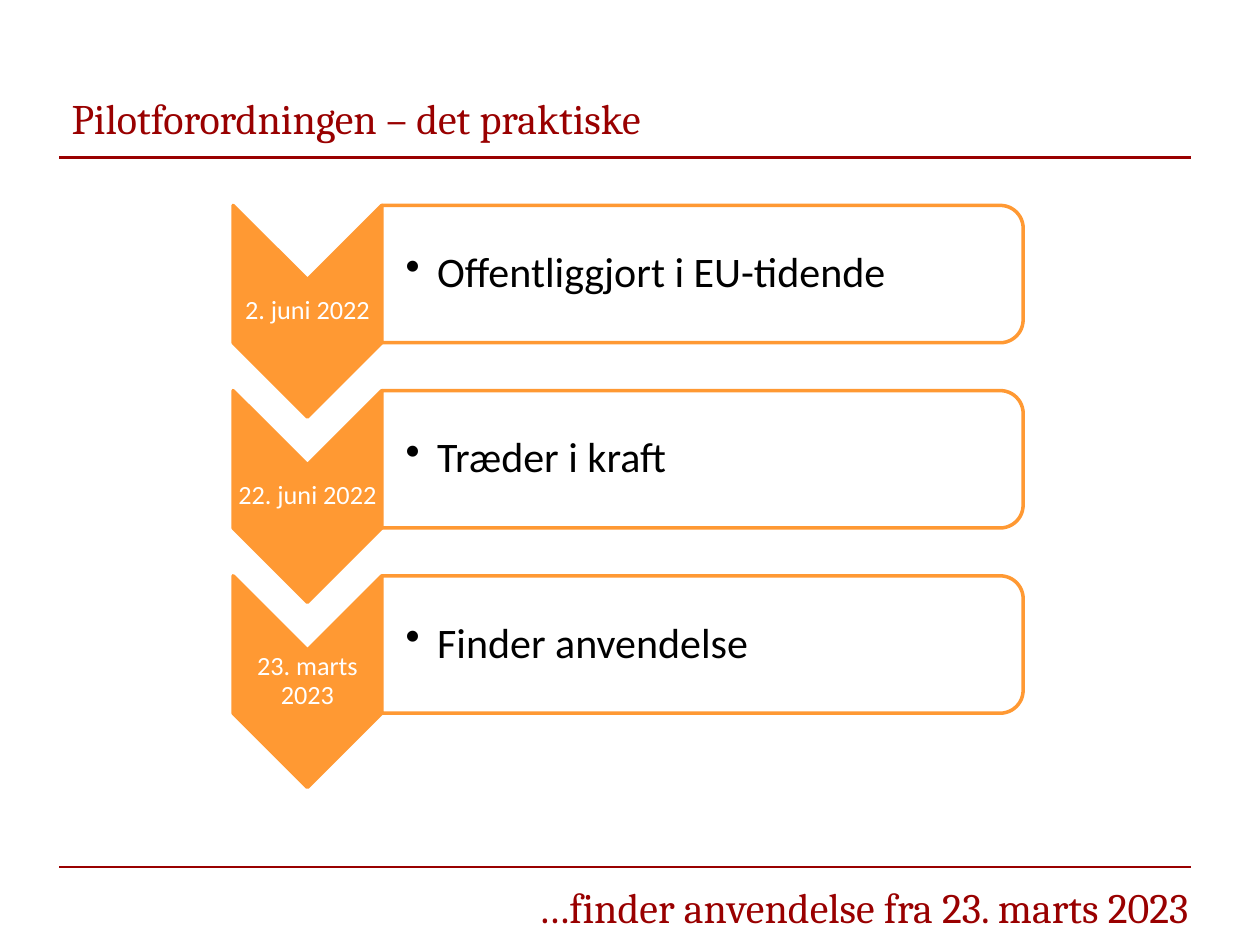
"""Build the slide on the practical dates of the pilot regulation."""
from lxml import etree
from pptx import Presentation
from pptx.dml.color import RGBColor
from pptx.enum import shapes, text
from pptx.oxml.ns import qn
from pptx.util import Inches, Pt

TITLE = "Pilotforordningen – det praktiske"
CONCLUSION = "…finder anvendelse fra 23. marts 2023"
STEPS = [
    ("2. juni 2022", "Offentliggjort i EU-tidende"),
    ("22. juni 2022", "Træder i kraft"),
    ("23. marts 2023", "Finder anvendelse"),
]
COLORS = {"red": "990000", "orange": "FF9933", "white": "FFFFFF", "black": "000000"}
RULE_LEFT, RULE_RIGHT, RULE_TOPS = 0.47, 9.45, (1.25, 6.88)
FIRST_TOP, STEP_PITCH = 1.63, 1.47
CHEVRON_LEFT, CHEVRON_WIDTH, CHEVRON_HEIGHT = 1.85, 1.18, 1.68
PANEL_WIDTH, PANEL_HEIGHT = 5.09, 1.09
DATE_HEIGHT = 0.5


def color(name):
    return RGBColor.from_string(COLORS[name])


def add_text(slide, words, box, font="Calibri", size=24, fill="black", align=text.PP_ALIGN.LEFT,
             anchor=text.MSO_ANCHOR.MIDDLE, insets=(0.1, 0.05, 0.1, 0.05), spacing=1.0, bullet=False):
    frame = slide.shapes.add_textbox(*map(Inches, box)).text_frame
    frame.word_wrap = True
    frame.vertical_anchor = anchor
    frame.margin_left, frame.margin_top, frame.margin_right, frame.margin_bottom = map(Inches, insets)
    paragraph = frame.paragraphs[0]
    paragraph.text = words
    paragraph.alignment = align
    paragraph.line_spacing = spacing
    if bullet:
        properties = paragraph._p.get_or_add_pPr()
        properties.set("marL", str(Inches(0.25)))
        properties.set("indent", str(-Inches(0.25)))
        etree.SubElement(properties, qn("a:buChar")).set("char", "•")
    run_font = paragraph.runs[0].font
    run_font.name, run_font.size = font, Pt(size)
    run_font.color.rgb = color(fill)


def add_turned_shape(slide, kind, left, top, width, height, fill):
    """Add a quarter-turned shape that fills the given box once turned."""
    turned_left = left + (width - height) / 2
    turned_top = top + (height - width) / 2
    shape = slide.shapes.add_shape(kind, *map(Inches, (turned_left, turned_top, height, width)))
    shape.rotation = 90
    shape.shadow.inherit = False
    shape.fill.solid()
    shape.fill.fore_color.rgb = color(fill)
    shape.line.color.rgb = color("orange")
    shape.line.width = Pt(2)


def add_rule(slide, top):
    rule = slide.shapes.add_connector(
        shapes.MSO_CONNECTOR.STRAIGHT, *map(Inches, (RULE_LEFT, top, RULE_RIGHT, top)))
    rule.line.color.rgb = color("red")
    rule.line.width = Pt(1.25)
    etree.SubElement(rule._element.spPr, qn("a:effectLst"))


def add_step(slide, top, date, event):
    panel_left = CHEVRON_LEFT + CHEVRON_WIDTH
    add_turned_shape(slide, shapes.MSO_SHAPE.CHEVRON, CHEVRON_LEFT, top,
                     CHEVRON_WIDTH, CHEVRON_HEIGHT, "orange")
    date_top = top + (CHEVRON_HEIGHT - DATE_HEIGHT) / 2
    add_text(slide, date, (CHEVRON_LEFT, date_top, CHEVRON_WIDTH, DATE_HEIGHT), size=15,
             fill="white", align=text.PP_ALIGN.CENTER, insets=(0.01,) * 4, spacing=0.9)
    add_turned_shape(slide, shapes.MSO_SHAPE.ROUND_2_SAME_RECTANGLE, panel_left, top,
                     PANEL_WIDTH, PANEL_HEIGHT, "white")
    add_text(slide, event, (panel_left, top + 0.05, PANEL_WIDTH - 0.05, PANEL_HEIGHT - 0.1),
             insets=(0.19, 0.02, 0.02, 0.02), spacing=0.9, bullet=True)


def main():
    presentation = Presentation()
    presentation.slide_width, presentation.slide_height = Inches(10), Inches(7.5)
    slide = presentation.slides.add_slide(presentation.slide_layouts[6])
    for top in RULE_TOPS:
        add_rule(slide, top)
    add_text(slide, TITLE, (RULE_LEFT, 0.59, 9, 0.69), font="Cambria", fill="red")
    for index, (date, event) in enumerate(STEPS):
        add_step(slide, FIRST_TOP + index * STEP_PITCH, date, event)
    add_text(slide, CONCLUSION, (RULE_LEFT, 6.95, 9.06, 0.47), font="Cambria", fill="red",
             align=text.PP_ALIGN.RIGHT, anchor=text.MSO_ANCHOR.TOP)
    presentation.save("out.pptx")


if __name__ == "__main__":
    main()
